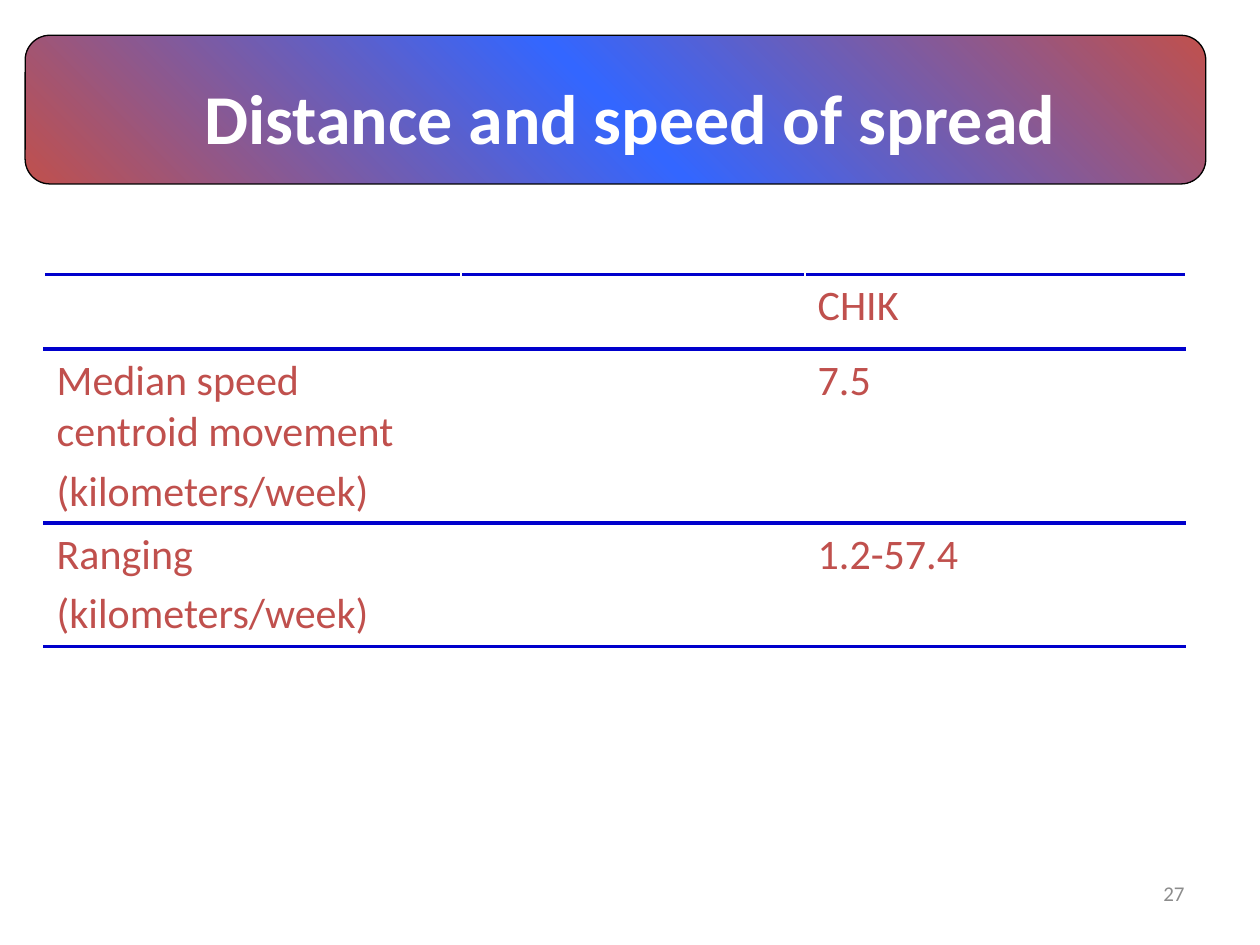
from copy import deepcopy

from lxml import etree
from pptx import Presentation
from pptx.dml.color import RGBColor
from pptx.enum import shapes, text
from pptx.oxml import ns
from pptx.util import Inches, Pt

RED, BLUE, RULE = "C0504D", "3366FF", "0000CC"


def color(value):
    return RGBColor.from_string(value)


def style(paragraph, size, value, bold=False):
    paragraph.font.name = "Calibri"
    paragraph.font.size = Pt(size)
    paragraph.font.bold = bold
    paragraph.font.color.rgb = color(value)


deck = Presentation()
deck.slide_width, deck.slide_height = Inches(10), Inches(7.5)
slide = deck.slides.add_slide(deck.slide_layouts[6])

# Slide number
number = slide.shapes.add_textbox(Inches(7.17), Inches(6.83), Inches(2.33), Inches(0.52)).text_frame
number.word_wrap = True
number.vertical_anchor = text.MSO_ANCHOR.MIDDLE
number.text = "27"
number.paragraphs[0].alignment = text.PP_ALIGN.RIGHT
style(number.paragraphs[0], 12, "8C8C8C")

# Speed table
rows = [
    ["", "", "CHIK"],
    ["Median speed centroid movement\n(kilometers/week)", "", "7.5"],
    ["Ranging\n(kilometers/week)", "", "1.2-57.4"],
]
rules = [("lnT", "lnB"), ("lnT",), ("lnB",)]
speeds = slide.shapes.add_table(3, 3, Inches(0.35), Inches(2.18), Inches(9.06), Inches(2.95)).table
speeds.first_row = speeds.horz_banding = False
for column, width in zip(speeds.columns, (3.31, 2.73, 3.02)):
    column.width = Inches(width)
for row, height in zip(speeds.rows, (0.59, 1.38, 0.98)):
    row.height = Inches(height)

for r, labels in enumerate(rows):
    for c, label in enumerate(labels):
        cell = speeds.cell(r, c)
        cell.text = label
        for i, paragraph in enumerate(cell.text_frame.paragraphs):
            style(paragraph, 24, RED)
            if i:
                paragraph.space_before = Pt(4.8)
        # Horizontal rules
        properties = cell._tc.get_or_add_tcPr()
        for side in rules[r]:
            line = etree.SubElement(properties, ns.qn(f"a:{side}"), w=str(Pt(2.25)))
            fill = etree.SubElement(line, ns.qn("a:solidFill"))
            etree.SubElement(fill, ns.qn("a:srgbClr"), val=RULE)
        cell.fill.background()

# Title banner with a red-blue-red gradient
banner = slide.shapes.add_shape(
    shapes.MSO_SHAPE.ROUNDED_RECTANGLE, Inches(0.2), Inches(0.28), Inches(9.37), Inches(1.18))
banner.shadow.inherit = False
banner.line.color.rgb = color("000000")
banner.line.width = Pt(0.75)
banner.fill.gradient()
banner.fill.gradient_angle = 45
stop_list = banner.fill._xPr.find(ns.qn("a:gradFill")).find(ns.qn("a:gsLst"))
stop_list.append(deepcopy(stop_list[0]))
for stop, position, value in zip(banner.fill.gradient_stops, (0, 0.5, 1), (RED, BLUE, RED)):
    stop.position = position
    stop.color.rgb = color(value)

# Title
title = slide.shapes.add_textbox(Inches(0.5), Inches(0.3), Inches(9), Inches(1.25)).text_frame
title.word_wrap = True
title.vertical_anchor = text.MSO_ANCHOR.MIDDLE
title.text = "Distance and speed of spread"
title.paragraphs[0].alignment = text.PP_ALIGN.CENTER
style(title.paragraphs[0], 40, "FFFFFF", bold=True)

deck.save("out.pptx")
